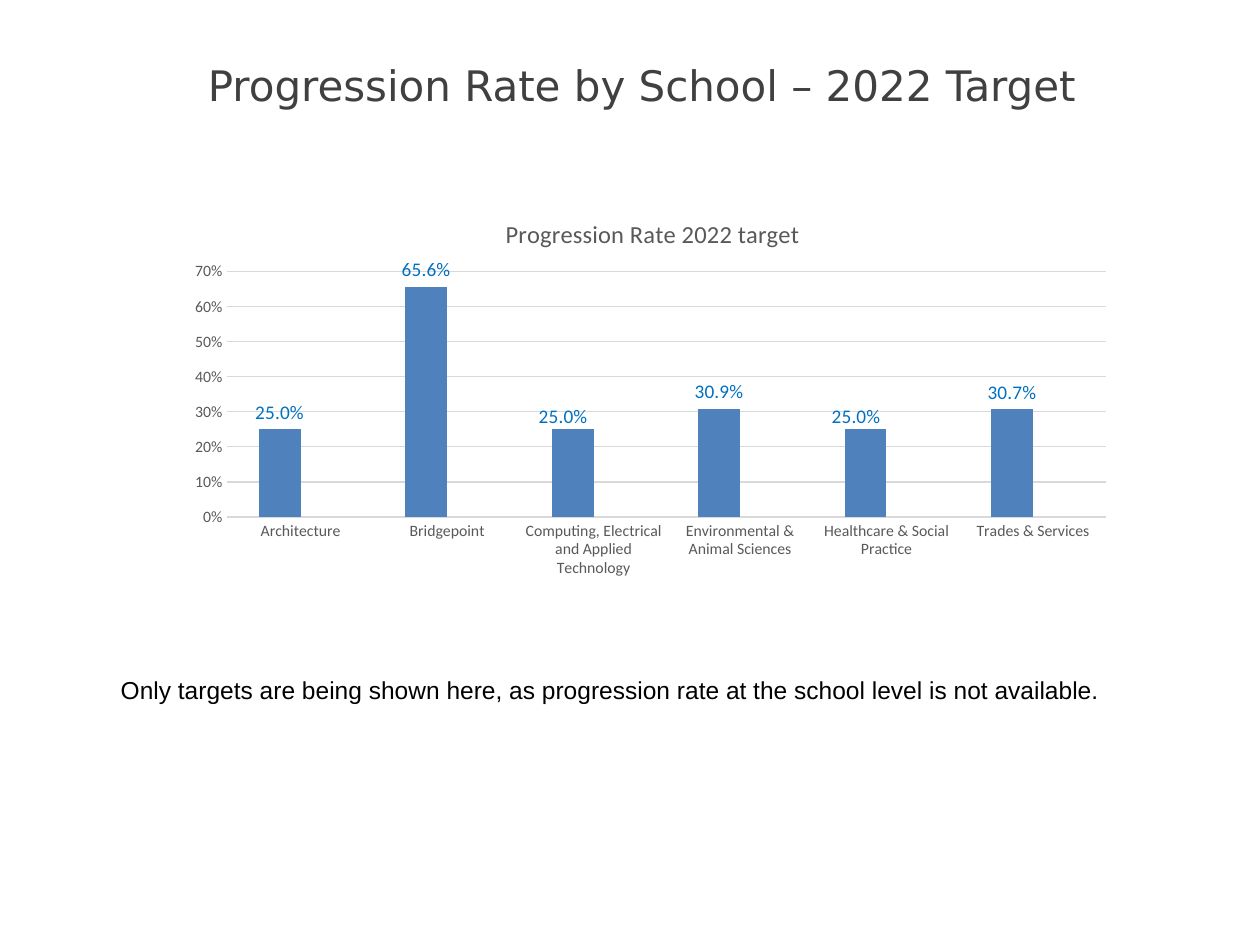
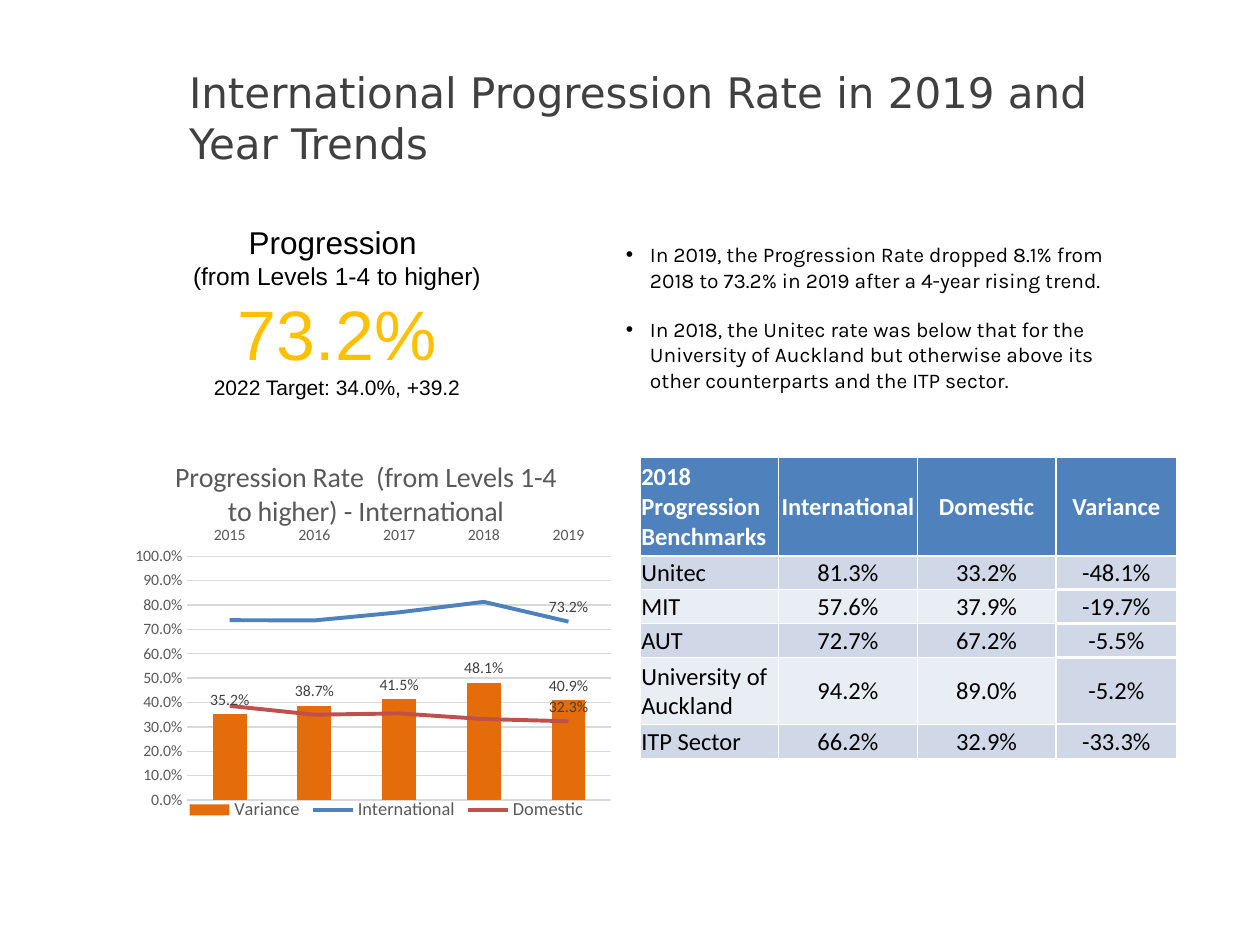
import dataclasses

import lxml.etree
import pptx
import pptx.chart.data
import pptx.dml.color
import pptx.enum.chart
import pptx.enum.text
import pptx.oxml.ns
import pptx.util

Inches = pptx.util.Inches
Pt = pptx.util.Pt
qn = pptx.oxml.ns.qn
ALIGN = pptx.enum.text.PP_ALIGN
MIDDLE = pptx.enum.text.MSO_ANCHOR.MIDDLE
LABEL = pptx.enum.chart.XL_LABEL_POSITION


@dataclasses.dataclass(frozen=True)
class Theme:
    title_font: str = "DejaVu Sans"
    body_font: str = "Arial"
    bullet_font: str = "Karla"
    data_font: str = "Calibri"
    dark: str = "404040"
    black: str = "000000"
    white: str = "FFFFFF"
    muted: str = "595959"
    grid: str = "D9D9D9"
    blue: str = "4F81BD"
    red: str = "C0504D"
    orange: str = "E46C0A"
    gold: str = "FFC000"
    label_blue: str = "0070C0"
    band: str = "D0D8E8"
    light_band: str = "E9EDF4"
    title_size: float = 24
    heading_size: float = 18
    body_size: float = 14
    small_size: float = 12
    figure_size: float = 40
    axis_size: float = 9
    legend_size: float = 10.5
    label_size: float = 11


T = Theme()


def rgb(color):
    return pptx.dml.color.RGBColor.from_string(color)


def style_font(font, name, size, color, bold=False):
    font.name = name
    font.size = Pt(size)
    font.bold = bold
    font.color.rgb = rgb(color)


def add_run(p, text, name, size, color, bold=False):
    r = p.add_run()
    r.text = text
    style_font(r.font, name, size, color, bold)


def place(sp, box):
    sp.left, sp.top, sp.width, sp.height = (Inches(v) for v in box)


def add_titled_slide(prs, text, box, bottom_inset=0.05):
    s = prs.slides.add_slide(prs.slide_layouts[5])
    sp = s.shapes.title
    place(sp, box)
    tf = sp.text_frame
    tf.auto_size = pptx.enum.text.MSO_AUTO_SIZE.NONE
    tf.vertical_anchor = MIDDLE
    tf.margin_bottom = Inches(bottom_inset)
    p = tf.paragraphs[0]
    p.alignment = ALIGN.LEFT
    add_run(p, text, T.title_font, T.title_size, T.dark)
    return s


def add_text(s, box, lines, name, align=ALIGN.LEFT, bullet_gap=None):
    sp = s.shapes.add_textbox(*(Inches(v) for v in box))
    tf = sp.text_frame
    tf.word_wrap = True
    for i, (text, size, color) in enumerate(lines):
        p = tf.add_paragraph() if i else tf.paragraphs[0]
        p.alignment = align
        if bullet_gap is not None:
            if i:
                p.space_before = Pt(bullet_gap)
            add_bullet(p)
        add_run(p, text, name, size, color)


def add_bullet(p):
    indent = Inches(0.19)
    pPr = p._p.get_or_add_pPr()
    pPr.set("marL", str(indent))
    pPr.set("indent", str(-indent))
    lxml.etree.SubElement(pPr, qn("a:buFont"), typeface="Arial")
    lxml.etree.SubElement(pPr, qn("a:buChar"), char="•")


def set_layout(parent, index, **values):
    for old in parent.findall(qn("c:layout")):
        parent.remove(old)
    layout = lxml.etree.Element(qn("c:layout"))
    manual = lxml.etree.SubElement(layout, qn("c:manualLayout"))
    for tag, value in values.items():
        lxml.etree.SubElement(manual, qn(f"c:{tag}"), val=str(value))
    parent.insert(index, layout)


def edge_layout(x, y, w, h):
    return dict(xMode="edge", yMode="edge", x=x, y=y, w=w, h=h)


def add_column_chart(s, box, title, title_size, cats, series, top, axis_format, plot_box):
    data = pptx.chart.data.CategoryChartData(number_format="0.0%")
    data.categories = cats
    for name, values in series:
        data.add_series(name, values)
    kind = pptx.enum.chart.XL_CHART_TYPE.COLUMN_CLUSTERED
    chart = s.shapes.add_chart(kind, *(Inches(v) for v in box), data).chart
    chart.has_legend = False
    style_font(chart.font, T.data_font, 10, T.black)
    chart.has_title = True
    p = chart.chart_title.text_frame.paragraphs[0]
    add_run(p, title, T.data_font, title_size, T.muted)
    chart.plots[0].gap_width = 150
    chart.plots[0].overlap = 0
    chart.plots[0].vary_by_categories = False
    for axis in (chart.category_axis, chart.value_axis):
        axis.major_tick_mark = pptx.enum.chart.XL_TICK_MARK.NONE
        axis.minor_tick_mark = pptx.enum.chart.XL_TICK_MARK.NONE
        style_font(axis.tick_labels.font, T.data_font, T.axis_size, T.muted)
    axis.minimum_scale, axis.maximum_scale, axis.major_unit = 0, top, 0.1
    axis.tick_labels.number_format = axis_format
    axis.tick_labels.number_format_is_linked = False
    axis.format.line.fill.background()
    for line in (chart.category_axis.format.line, axis.major_gridlines.format.line):
        line.color.rgb = rgb(T.grid)
        line.width = Pt(0.75)
    set_layout(chart._chartSpace.chart.plotArea, 0, layoutTarget="inner", **edge_layout(*plot_box))
    return chart


def style_columns(series, color, label_size, label_color):
    series.format.fill.solid()
    series.format.fill.fore_color.rgb = rgb(color)
    labels = series.data_labels
    labels.show_value = True
    labels.number_format = "0.0%"
    labels.number_format_is_linked = False
    labels.position = LABEL.OUTSIDE_END
    style_font(labels.font, T.data_font, label_size, label_color)


def nudge_label(series, index, dx, dy):
    label = series.points[index].data_label
    label.position = LABEL.OUTSIDE_END
    style_font(label.font, T.data_font, T.label_size, T.label_blue)
    set_layout(series.data_labels._element.findall(qn("c:dLbl"))[-1], 1, x=dx, y=dy)


def move_to_lines(chart, first):
    bars = chart._chartSpace.chart.plotArea.find(qn("c:barChart"))
    lines = lxml.etree.Element(qn("c:lineChart"))
    lxml.etree.SubElement(lines, qn("c:grouping"), val="standard")
    lxml.etree.SubElement(lines, qn("c:varyColors"), val="0")
    for ser in bars.findall(qn("c:ser"))[first:]:
        for flag in ser.findall(qn("c:invertIfNegative")):
            ser.remove(flag)
        lines.append(ser)
    lxml.etree.SubElement(lines, qn("c:marker"), val="1")
    for axis in bars.findall(qn("c:axId")):
        lxml.etree.SubElement(lines, qn("c:axId"), val=axis.get("val"))
    bars.addnext(lines)


def style_line(series, color):
    series.smooth = False
    series.marker.style = pptx.enum.chart.XL_MARKER_STYLE.NONE
    series.format.line.color.rgb = rgb(color)
    series.format.line.width = Pt(2.25)
    series.data_labels.show_value = False
    last = series.points[len(series.values) - 1].data_label
    last.position = LABEL.ABOVE
    style_font(last.font, T.data_font, T.axis_size, T.dark)


def add_legend(chart, box):
    chart.has_legend = True
    legend = chart.legend
    legend.position = pptx.enum.chart.XL_LEGEND_POSITION.TOP
    legend.include_in_layout = False
    style_font(legend.font, T.data_font, T.legend_size, T.muted)
    set_layout(legend._element, 1, **edge_layout(*box))


def set_borders(cell, top, bottom):
    tcPr = cell._tc.get_or_add_tcPr()
    for i, (side, width) in enumerate(zip("LRTB", (1, 1, top, bottom))):
        ln = lxml.etree.Element(qn(f"a:ln{side}"), w=str(Pt(width)))
        fill = lxml.etree.SubElement(ln, qn("a:solidFill"))
        lxml.etree.SubElement(fill, qn("a:srgbClr"), val=T.white)
        tcPr.insert(i, ln)


def add_benchmark_table(s, box, widths, heights, rows):
    table = s.shapes.add_table(len(rows), len(widths), *(Inches(v) for v in box)).table
    for column, width in zip(table.columns, widths):
        column.width = Inches(width)
    for row, height in zip(table.rows, heights):
        row.height = Inches(height)
    last_column = len(widths) - 1
    for i, row in enumerate(rows):
        for j, text in enumerate(row):
            cell = table.cell(i, j)
            banded = i % 2 == 1 or j == last_column
            cell.fill.solid()
            cell.fill.fore_color.rgb = rgb(T.blue if i == 0 else T.band if banded else T.light_band)
            cell.vertical_anchor = MIDDLE
            cell.margin_left = cell.margin_right = cell.margin_top = Inches(0.01)
            cell.margin_bottom = 0
            p = cell.text_frame.paragraphs[0]
            p.alignment = ALIGN.CENTER if j else ALIGN.LEFT
            add_run(p, text, T.data_font, T.body_size, T.black if i else T.white, i == 0)
            heavy = j == last_column
            set_borders(cell, 1.5 if i == 1 or (heavy and i) else 1,
                        1.5 if i == 0 or (heavy and i < len(rows) - 1) else 1)


def build_school_targets(prs):
    s = add_titled_slide(prs, "Progression Rate by School – 2022 Target", (1.55, 0.29, 7.87, 1.15), 0.43)
    note = "Only targets are being shown here, as progression rate at the school level is not available."
    add_text(s, (0.86, 5.31, 8.2, 0.34), [(note, T.body_size, T.black)], T.body_font)
    schools = ["Architecture", "Bridgepoint", "Computing, Electrical and Applied Technology",
               "Environmental & Animal Sciences", "Healthcare & Social Practice", "Trades & Services"]
    series = [("Series 1", (0.25, 0.656, 0.25, 0.309, 0.25, 0.307)),
              ("Series 2", (None,) * len(schools))]
    chart = add_column_chart(s, (1.43, 1.57, 7.5, 3.09), "Progression Rate 2022 target", 14,
                             schools, series, 0.7, "0%", (0.05, 0.19, 0.93, 0.63))
    targets = chart.plots[0].series[0]
    style_columns(targets, T.blue, T.label_size, T.label_blue)
    nudge_label(targets, 2, -0.01, 0.01)
    nudge_label(targets, 4, -0.01, 0.01)


def build_international_trends(prs):
    s = add_titled_slide(prs, "International Progression Rate in 2019 and Year Trends", (1.4, 0.65, 7.87, 0.56))
    findings = [
        "In 2019, the Progression Rate dropped 8.1% from 2018 to 73.2% in 2019 after a 4-year rising trend.",
        "In 2018, the Unitec rate was below that for the University of Auckland but otherwise above its "
        "other counterparts and the ITP sector.",
    ]
    add_text(s, (4.87, 1.87, 4.03, 1.51), [(text, T.small_size, T.black) for text in findings],
             T.bullet_font, bullet_gap=14)
    series = [("Variance", (0.352, 0.387, 0.415, 0.481, 0.409)),
              ("International", (0.738, 0.737, 0.77, 0.813, 0.732)),
              ("Domestic", (0.386, 0.35, 0.355, 0.332, 0.323))]
    chart = add_column_chart(s, (0.88, 3.48, 4.05, 3.12),
                             "Progression Rate  (from Levels 1-4 to higher) - International", 16,
                             [str(year) for year in range(2015, 2020)], series, 1, "0.0%",
                             (0.15, 0.3, 0.83, 0.62))
    chart.category_axis.tick_label_position = pptx.enum.chart.XL_TICK_LABEL_POSITION.HIGH
    move_to_lines(chart, 1)
    style_columns(chart.plots[0].series[0], T.orange, T.axis_size, T.dark)
    for line, color in zip(chart.plots[1].series, (T.blue, T.red)):
        style_line(line, color)
    add_legend(chart, (0.14, 0.91, 0.8, 0.07))
    add_benchmark_table(s, (5.08, 3.63, 4.28, 2.39), (1.1, 1.1, 1.1, 0.96),
                        (0.78, 0.27, 0.27, 0.27, 0.53, 0.27), [
        ("2018 Progression Benchmarks", "International", "Domestic", "Variance"),
        ("Unitec", "81.3%", "33.2%", "-48.1%"),
        ("MIT", "57.6%", "37.9%", "-19.7%"),
        ("AUT", "72.7%", "67.2%", "-5.5%"),
        ("University of Auckland", "94.2%", "89.0%", "-5.2%"),
        ("ITP Sector", "66.2%", "32.9%", "-33.3%"),
    ])
    add_text(s, (1.12, 1.72, 3.11, 1.55), [
        ("Progression ", T.heading_size, T.black),
        ("(from Levels 1-4 to higher)", T.body_size, T.black),
        ("73.2%", T.figure_size, T.gold),
        ("2022 Target: 34.0%, +39.2", T.small_size, T.black),
    ], T.body_font, ALIGN.CENTER)


def main():
    prs = pptx.Presentation()
    prs.slide_width, prs.slide_height = Inches(10), Inches(7.5)
    build_school_targets(prs)
    build_international_trends(prs)
    prs.save("out.pptx")


if __name__ == "__main__":
    main()
